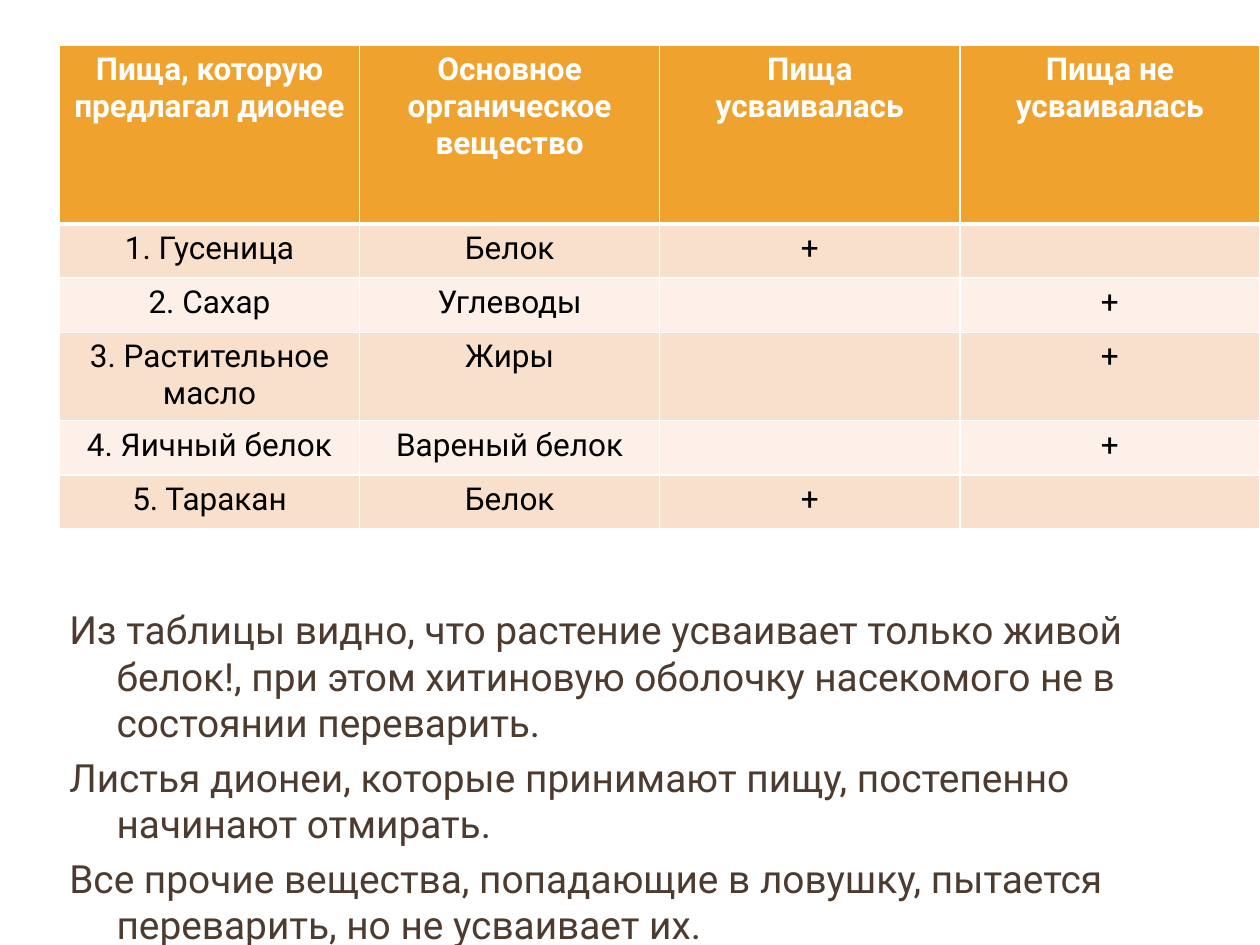
from pptx import Presentation, util as u
from pptx.dml.color import RGBColor
from pptx.enum import text
from pptx.oxml import parse_xml
from pptx.oxml.ns import nsdecls

COLORS = {"header": "F0A22E", "odd": "F9E0CD", "even": "FCF0E8",
          "white": "FFFFFF", "black": "000000", "brown": "4E3B30"}

FOODS = [
    ("Пища, которую предлагал дионее", "Основное органическое вещество",
     "Пища усваивалась", "Пища не усваивалась"),
    ("1. Гусеница", "Белок", "+", ""),
    ("2. Сахар", "Углеводы", "", "+"),
    ("3. Растительное масло", "Жиры", "", "+"),
    ("4. Яичный белок", "Вареный белок", "", "+"),
    ("5. Таракан", "Белок", "+", ""),
]
ROW_HEIGHTS = [102, 31, 31, 49.5, 31, 31]

CONCLUSIONS = [
    "Из таблицы видно, что растение усваивает только живой белок!, "
    "при этом хитиновую оболочку насекомого не в состоянии переварить.",
    "Листья дионеи, которые принимают пищу, постепенно начинают отмирать.",
    "Все прочие вещества, попадающие в ловушку, пытается переварить, "
    "но не усваивает их.",
]


class SlideBuilder:
    font = "Roboto"

    def __init__(self, prs):
        self.s = prs.slides.add_slide(prs.slide_layouts[6])

    def style(self, p, size, color, bold=False):
        p.font.name = self.font
        p.font.size = u.Pt(size)
        p.font.bold = bold
        p.font.color.rgb = RGBColor.from_string(COLORS[color])

    def borders(self, cell, bottom):
        tcPr = cell._tc.get_or_add_tcPr()
        widths = {"L": 1, "R": 1, "T": 1, "B": bottom}
        for i, (side, width) in enumerate(widths.items()):
            tcPr.insert(i, parse_xml(
                f'<a:ln{side} {nsdecls("a")} w="{u.Pt(width)}"><a:solidFill>'
                f'<a:srgbClr val="{COLORS["white"]}"/></a:solidFill></a:ln{side}>'))

    def table(self, x, y, w, rows, heights):
        frame = self.s.shapes.add_table(len(rows), len(rows[0]), u.Pt(x), u.Pt(y),
                                        u.Pt(w), u.Pt(sum(heights)))
        tbl = frame.table
        for r, (values, height) in enumerate(zip(rows, heights)):
            tbl.rows[r].height = u.Pt(height)
            header = r == 0
            fill = "header" if header else "odd" if r % 2 else "even"
            for c, value in enumerate(values):
                cell = tbl.cell(r, c)
                cell.fill.solid()
                cell.fill.fore_color.rgb = RGBColor.from_string(COLORS[fill])
                self.borders(cell, 3 if header else 1)
                cell.text = value
                p = cell.text_frame.paragraphs[0]
                p.alignment = text.PP_ALIGN.CENTER
                self.style(p, 18, "white" if header else "black", header)

    def paragraphs(self, x, y, w, h, items):
        tf = self.s.shapes.add_textbox(u.Pt(x), u.Pt(y), u.Pt(w), u.Pt(h)).text_frame
        tf.word_wrap = True
        for i, item in enumerate(items):
            p = tf.paragraphs[0] if i == 0 else tf.add_paragraph()
            p.text = item
            pPr = p._p.get_or_add_pPr()
            pPr.set("marL", str(u.Pt(27)))
            pPr.set("indent", str(u.Pt(-27)))
            if i:
                p.space_before = u.Pt(4.5)
            self.style(p, 22.2, "brown")


def main():
    prs = Presentation()
    prs.slide_width, prs.slide_height = u.Pt(720), u.Pt(540)
    slide = SlideBuilder(prs)
    slide.paragraphs(32.5, 342.5, 687.5, 197.5, CONCLUSIONS)
    slide.table(34, 26, 686, FOODS, ROW_HEIGHTS)
    prs.save("out.pptx")


if __name__ == "__main__":
    main()
